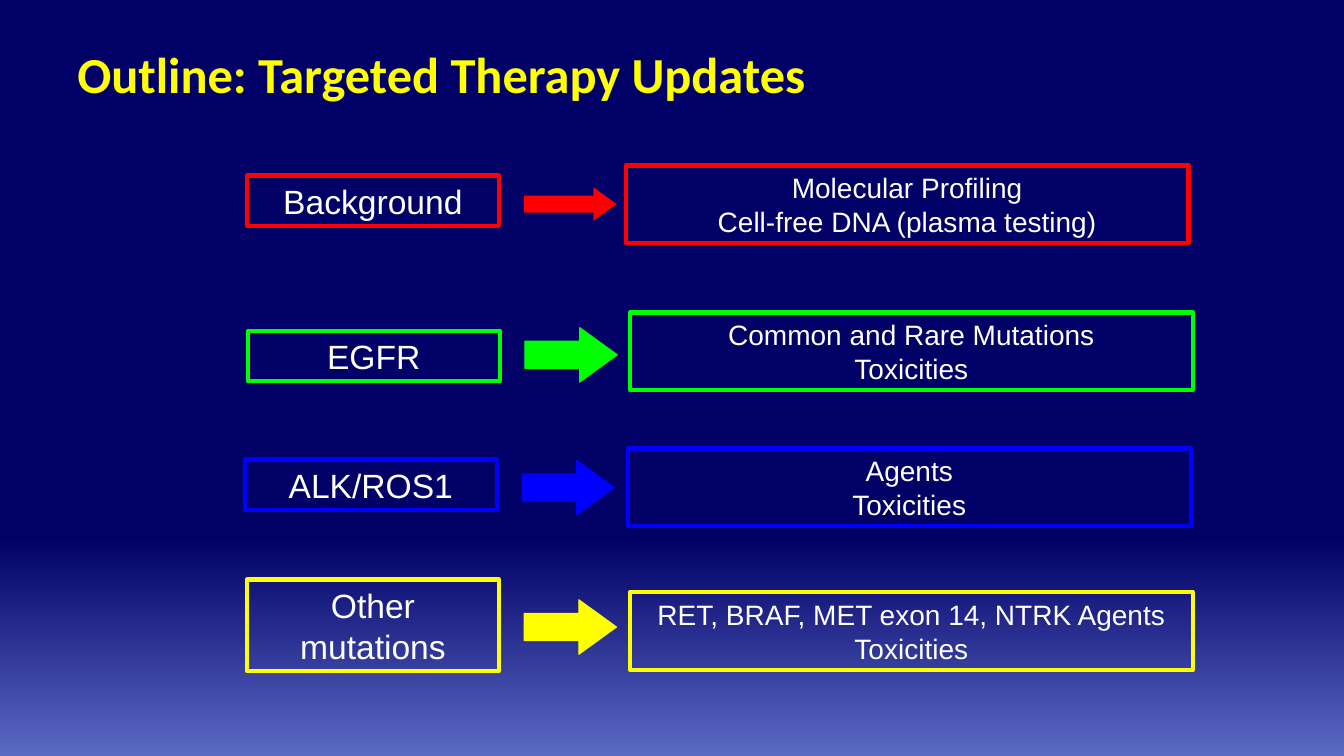
from dataclasses import dataclass

from pptx import Presentation
from pptx import util as u
from pptx.dml.color import RGBColor
from pptx.enum import shapes, text


@dataclass(frozen=True)
class Theme:
    night: str = "000066"
    dusk: str = "5B69C3"
    heading: str = "FFFF00"
    body: str = "FFFFFF"
    heading_font: str = "Calibri"
    body_font: str = "Arial"
    heading_size: int = 36
    topic_size: int = 24
    detail_size: int = 20
    frame_width: float = 3
    arrow_line: float = 0.75


class Outline:
    """Draws on one slide; lengths are columns and rows of a 160 x 90 grid."""

    def __init__(self, deck, theme):
        self.theme = theme
        self.column = deck.slide_width / 160
        self.row = deck.slide_height / 90
        self.slide = deck.slides.add_slide(deck.slide_layouts[5])

    def area(self, left, top, width, height):
        return (round(left * self.column), round(top * self.row),
                round(width * self.column), round(height * self.row))

    def background(self):
        fill = self.slide.background.fill
        fill.gradient()
        fill.gradient_angle = 270
        stops = zip(fill.gradient_stops, (0.71, 1), (self.theme.night, self.theme.dusk))
        for stop, position, color in stops:
            stop.position = position
            stop.color.rgb = RGBColor.from_string(color)

    def set_wording(self, shape, wording, font, size, color, align, anchor, bold=False):
        frame = shape.text_frame
        frame.text = wording
        frame.word_wrap = True
        frame.vertical_anchor = anchor
        for paragraph in frame.paragraphs:
            paragraph.alignment = align
            for run in paragraph.runs:
                run.font.name = font
                run.font.size = u.Pt(size)
                run.font.bold = bold
                run.font.color.rgb = RGBColor.from_string(color)

    def title(self, wording, *place):
        heading = self.slide.shapes.title
        heading.left, heading.top, heading.width, heading.height = self.area(*place)
        self.set_wording(heading, wording, self.theme.heading_font, self.theme.heading_size,
                         self.theme.heading, text.PP_ALIGN.LEFT, text.MSO_ANCHOR.MIDDLE, True)
        heading.text_frame.auto_size = text.MSO_AUTO_SIZE.NONE

    def shape(self, kind, color, line_width, place):
        shape = self.slide.shapes.add_shape(kind, *self.area(*place))
        shape.shadow.inherit = False
        shape.line.color.rgb = RGBColor.from_string(color)
        shape.line.width = u.Pt(line_width)
        return shape

    def box(self, wording, size, color, anchor, *place):
        box = self.shape(shapes.MSO_SHAPE.RECTANGLE, color, self.theme.frame_width, place)
        box.fill.background()
        self.set_wording(box, wording, self.theme.body_font, size, self.theme.body,
                         text.PP_ALIGN.CENTER, anchor)
        box.text_frame.auto_size = text.MSO_AUTO_SIZE.SHAPE_TO_FIT_TEXT

    def arrow(self, color, outlined, *place):
        arrow = self.shape(shapes.MSO_SHAPE.RIGHT_ARROW, color, self.theme.arrow_line, place)
        arrow.fill.solid()
        arrow.fill.fore_color.rgb = RGBColor.from_string(color)
        arrow.adjustments[0], arrow.adjustments[1] = 0.5, 0.69
        if not outlined:
            arrow.line.fill.background()


TOP, MIDDLE = text.MSO_ANCHOR.TOP, text.MSO_ANCHOR.MIDDLE

# Colour, anchor, left shift; topic (text, top, height);
# arrow (top, height, outlined); detail (text, left, top)
SECTIONS = [
    ("FF0000", TOP, 0, ("Background", 20.9, 6), (22.3, 4, False),
     ("Molecular Profiling\nCell-free DNA (plasma testing)", 74.5, 19.7)),
    ("00FF00", MIDDLE, 0.1, ("EGFR", 39.4, 6), (39, 6.5, True),
     ("Common and Rare Mutations\nToxicities", 75, 37.2)),
    ("0000FF", MIDDLE, -0.25, ("ALK/ROS1", 54.7, 6), (54.8, 6.5, True),
     ("Agents\nToxicities", 74.75, 53.4)),
    ("FFFF00", MIDDLE, 0, ("Other mutations", 69, 10.9), (71.4, 6.5, True),
     ("RET, BRAF, MET exon 14, NTRK Agents Toxicities", 75, 70.5)),
]


def main():
    deck = Presentation()
    deck.slide_width, deck.slide_height = u.Inches(13.33), u.Inches(7.5)
    theme = Theme()
    outline = Outline(deck, theme)

    # Background and title
    outline.background()
    outline.title("Outline: Targeted Therapy Updates", 8, 4.5, 120, 8.4)

    # Each topic points to its details
    for color, anchor, shift, topic, pointer, detail in SECTIONS:
        label, label_top, label_height = topic
        arrow_top, arrow_height, outlined = pointer
        wording, detail_left, detail_top = detail
        outline.box(label, theme.topic_size, color, anchor,
                    29.4 + shift, label_top, 30, label_height)
        outline.arrow(color, outlined, 62.4 + shift, arrow_top, 11, arrow_height)
        outline.box(wording, theme.detail_size, color, anchor,
                    detail_left, detail_top, 67, 9.25)

    deck.save("out.pptx")


if __name__ == "__main__":
    main()
